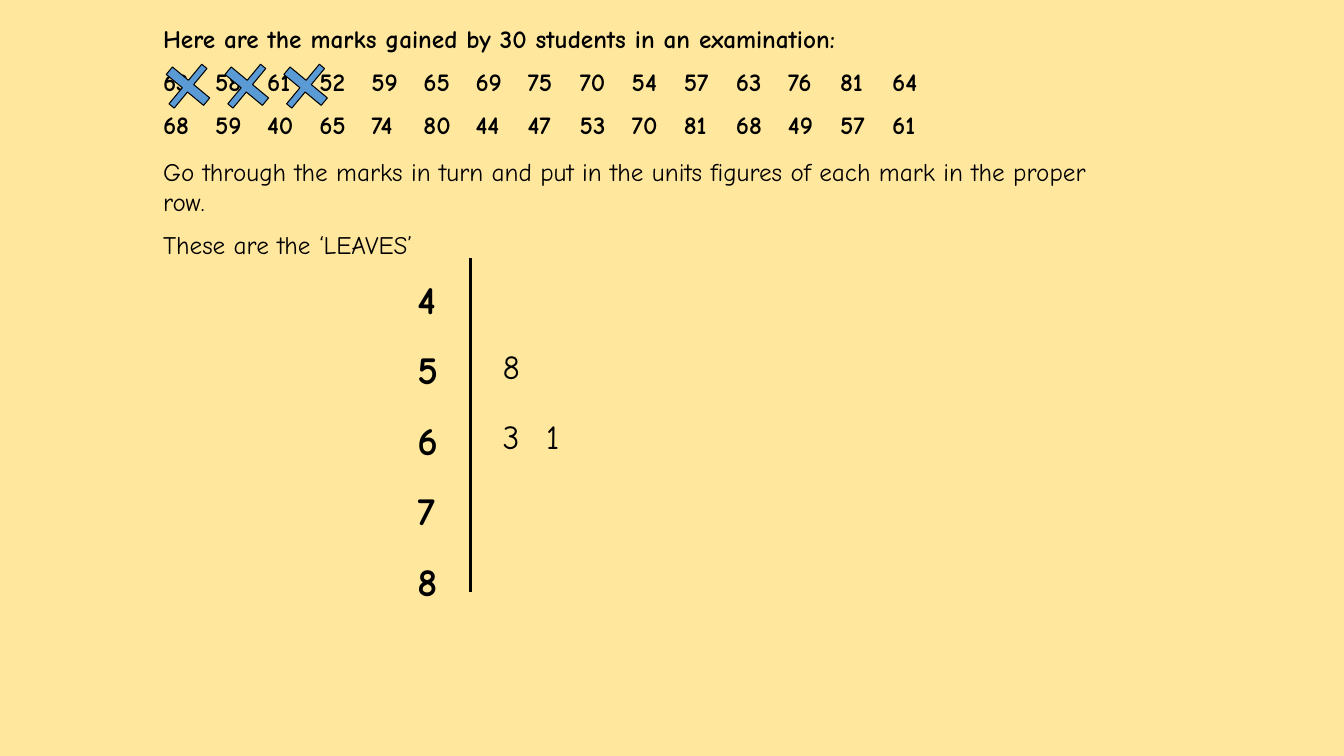
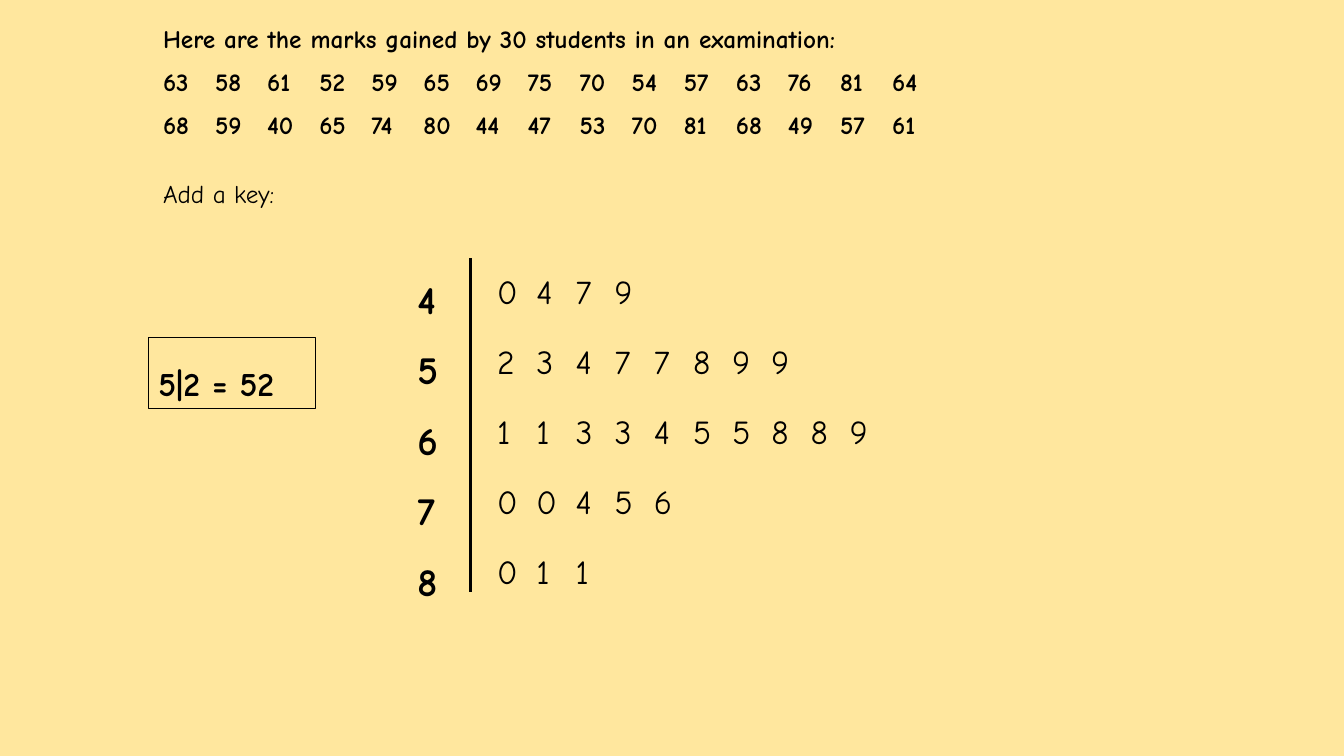
from lxml import etree
from pptx import Presentation
from pptx.dml.color import RGBColor
from pptx.enum import shapes
from pptx.oxml import ns
from pptx.util import Pt

FONT = "Comic Neue"
BACKGROUND, INK, CROSS = "FFE79E", "000000", "5B9BD5"
TITLE = "Here are the marks gained by 30 students in an examination:"
MARKS = [
    [63, 58, 61, 52, 59, 65, 69, 75, 70, 54, 57, 63, 76, 81, 64],
    [68, 59, 40, 65, 74, 80, 44, 47, 53, 70, 81, 68, 49, 57, 61],
]
STEMS = [4, 5, 6, 7, 8]
TEXT_LEFT, TEXT_WIDTH = 109.4, 695
PLOT_LEFT, PLOT_TOP = 291, 176
MARK_PITCH, LEAF_PITCH, ROW_PITCH = 37.2, 28, 50


def rgb(value):
    return RGBColor.from_string(value)


def tabbed(values):
    return "\t".join(str(v) for v in values)


def set_tabs(p, pitch, count):
    """Put evenly spaced left tab stops on a paragraph."""
    tabs = etree.SubElement(p._p.get_or_add_pPr(), ns.qn("a:tabLst"))
    for i in range(1, count + 1):
        etree.SubElement(tabs, ns.qn("a:tab"), pos=str(Pt(pitch * i)), algn="l")


def add_text(s, box, lines, size, bold=False, before=0, spacing=None, pitch=None):
    """Add a text box with one paragraph per line; pitch spaces tabbed values."""
    tb = s.shapes.add_textbox(*map(Pt, box))
    tf = tb.text_frame
    tf.word_wrap = True
    for i, line in enumerate(lines):
        p = tf.paragraphs[0] if i == 0 else tf.add_paragraph()
        p.add_run().text = line
        if "\t" in line:
            set_tabs(p, pitch, line.count("\t"))
        if i and before:
            p.space_before = Pt(before)
        if spacing:
            p.line_spacing = spacing
        p.font.name, p.font.size, p.font.bold = FONT, Pt(size), bold
        p.font.color.rgb = rgb(INK)
    return tb


def add_marks(s, left, top):
    lines = [TITLE] + [tabbed(row) for row in MARKS]
    add_text(s, (left, top, TEXT_WIDTH, 94), lines, 18, True, before=9,
             pitch=MARK_PITCH)


def add_stems(s, left, top):
    """Draw the stem column and the rule to its right."""
    x = left + 45
    rule = s.shapes.add_connector(shapes.MSO_CONNECTOR.STRAIGHT,
                                  Pt(x), Pt(top + 8.5), Pt(x), Pt(top + 247))
    rule.line.color.rgb, rule.line.width = rgb(INK), Pt(2.25)
    etree.SubElement(rule._element.spPr, ns.qn("a:effectLst"))
    add_text(s, (left, top, 45, 262), map(str, STEMS), 28, True, spacing=1.5)


def add_leaf(s, left, top, stem, leaves, width):
    """Write leaves on the row of their stem, in a plot starting at left, top."""
    y = top + ROW_PITCH * STEMS.index(stem)
    add_text(s, (left, y, width, 36.5), [tabbed(leaves)], 24, pitch=LEAF_PITCH)


def add_crosses(s, left, top, count):
    """Cross out the first marks of the list."""
    for i in range(count):
        cross = s.shapes.add_shape(shapes.MSO_SHAPE.CROSS, Pt(left + 42 * i),
                                   Pt(top), Pt(34.6), Pt(36.7))
        cross.adjustments[0] = 0.43
        cross.rotation = 39.6
        cross.shadow.inherit = False
        cross.fill.solid()
        cross.fill.fore_color.rgb = rgb(CROSS)
        cross.line.color.rgb, cross.line.width = rgb(INK), Pt(0.75)


def add_key(s, left, top):
    key = add_text(s, (left, top, 119.5, 51), ["5|2 = 52"], 24, True, spacing=1.5)
    key.line.color.rgb, key.line.width = rgb(INK), Pt(0.75)


def add_base(prs):
    """Add a slide with the background, marks and stems."""
    s = prs.slides.add_slide(prs.slide_layouts[6])
    s.background.fill.solid()
    s.background.fill.fore_color.rgb = rgb(BACKGROUND)
    add_marks(s, TEXT_LEFT, 13)
    add_stems(s, PLOT_LEFT, PLOT_TOP)
    return s


def build_first_leaves(prs):
    s = add_base(prs)
    add_crosses(s, 117, 43.2, 3)
    for column, stem, leaf in [(0, 6, 3), (0, 5, 8), (1, 6, 1)]:
        add_leaf(s, PLOT_LEFT + 61 + 31 * column, PLOT_TOP + 17.5, stem, [leaf], 50)
    add_text(s, (TEXT_LEFT, 108, TEXT_WIDTH, 83.5), [
        "Go through the marks in turn and put in the units figures of each mark "
        "in the proper row.",
        "These are the ‘LEAVES’",
    ], 18, before=9)


def build_ordered_leaves(prs):
    s = add_base(prs)
    marks = sorted(sum(MARKS, []))
    for stem in STEMS:
        leaves = [m % 10 for m in marks if m // 10 == stem]
        add_leaf(s, PLOT_LEFT + 57, PLOT_TOP + 13.8, stem, leaves, 391)
    add_key(s, 106, 241)
    add_text(s, (TEXT_LEFT, 124, TEXT_WIDTH, 29), ["Add a key:"], 18)


def main():
    prs = Presentation()
    prs.slide_width, prs.slide_height = Pt(960), Pt(540)
    build_first_leaves(prs)
    build_ordered_leaves(prs)
    prs.save("out.pptx")


if __name__ == "__main__":
    main()
